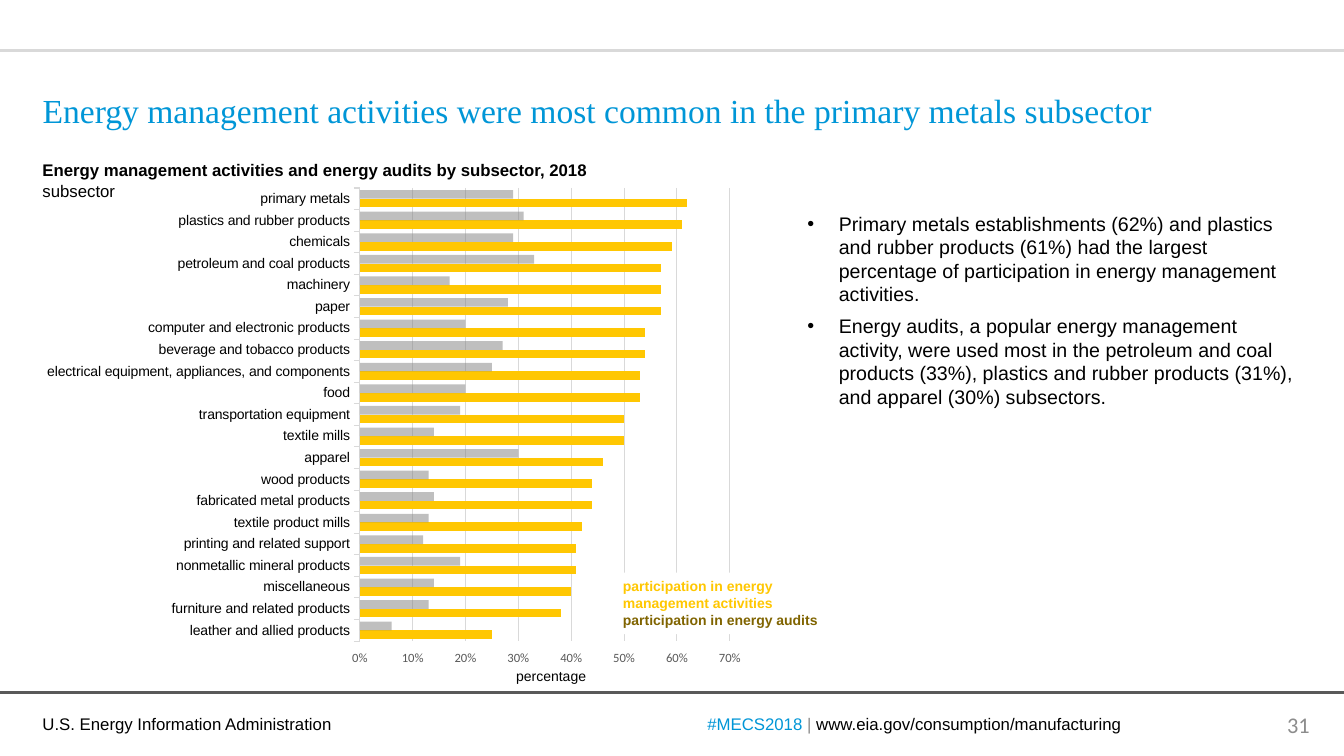
import copy

import pptx
import pptx.chart.data
import pptx.dml.color
import pptx.enum.chart
import pptx.enum.shapes
import pptx.enum.text
import pptx.oxml
import pptx.oxml.ns
import pptx.util
from lxml import etree
from pptx.oxml.ns import qn
from pptx.util import Cm

COLORS = {
    "black": "000000", "white": "FFFFFF", "blue": "0096D7", "gray": "8C8C8C",
    "rule": "D9D9D9", "dark_rule": "595959", "yellow": "FFC702",
    "audit": "808080", "audit_text": "806400",
}
ANCHOR = pptx.enum.text.MSO_ANCHOR
ALIGN = pptx.enum.text.PP_ALIGN

# subsector, share with energy management activities, share with energy audits
SUBSECTORS = [
    ("leather and allied products", 0.25, 0.06),
    ("furniture and related products", 0.38, 0.13),
    ("miscellaneous", 0.40, 0.14),
    ("nonmetallic mineral products", 0.41, 0.19),
    ("printing and related support", 0.41, 0.12),
    ("textile product mills", 0.42, 0.13),
    ("fabricated metal products", 0.44, 0.14),
    ("wood products", 0.44, 0.13),
    ("apparel", 0.46, 0.30),
    ("textile mills", 0.50, 0.14),
    ("transportation equipment", 0.50, 0.19),
    ("food", 0.53, 0.20),
    ("electrical equipment, appliances, and components", 0.53, 0.25),
    (" beverage and tobacco products", 0.54, 0.27),
    ("computer and electronic products", 0.54, 0.20),
    ("paper", 0.57, 0.28),
    ("machinery", 0.57, 0.17),
    ("petroleum and coal products", 0.57, 0.33),
    ("chemicals", 0.59, 0.29),
    ("plastics and rubber products", 0.61, 0.31),
    ("primary metals", 0.62, 0.29),
]


def rgb(name):
    return pptx.dml.color.RGBColor.from_string(COLORS[name])


def style_font(font, size, color="black", name="Arial", bold=False):
    font.size = pptx.util.Pt(size)
    font.name = name
    font.bold = bold
    font.color.rgb = rgb(color)


def add_rule(s, y, color):
    line = s.shapes.add_connector(
        pptx.enum.shapes.MSO_CONNECTOR.STRAIGHT, 0, Cm(y), Cm(33.87), Cm(y))
    line.line.color.rgb = rgb(color)
    line.line.width = pptx.util.Pt(2.25)
    etree.SubElement(line._element.spPr, qn("a:effectLst"))


def add_text(s, box, paragraphs, size, font="Arial", align=ALIGN.LEFT,
             anchor=ANCHOR.TOP, wrap=True):
    """Add a text box; each paragraph is a list of (text, color, bold) runs."""
    sp = s.shapes.add_textbox(*map(Cm, box))
    tf = sp.text_frame
    tf.word_wrap = wrap
    tf.vertical_anchor = anchor
    for i, runs in enumerate(paragraphs):
        p = tf.add_paragraph() if i else tf.paragraphs[0]
        p.alignment = align
        for text, color, bold in runs:
            r = p.add_run()
            r.text = text
            style_font(r.font, size, color, font, bold)
    return sp


def add_bullets(s, box, items):
    sp = add_text(s, box, [[(item, "black", False)] for item in items], 14)
    for p in sp.text_frame.paragraphs:
        p.space_after = pptx.util.Pt(6)
        pPr = p._p.get_or_add_pPr()
        pPr.set("marL", str(Cm(0.79)))
        pPr.set("indent", str(-Cm(0.79)))
        etree.SubElement(pPr, qn("a:buFont"), typeface="Arial")
        etree.SubElement(pPr, qn("a:buChar"), char="•")


def set_plot_area(chart, x, y, w, h):
    """Fix the inner plot area, in fractions of the chart."""
    plot_area = chart._chartSpace.chart.plotArea
    for old in plot_area.findall(qn("c:layout")):
        plot_area.remove(old)
    plot_area.insert(0, pptx.oxml.parse_xml(
        f'<c:layout {pptx.oxml.ns.nsdecls("c")}><c:manualLayout>'
        '<c:layoutTarget val="inner"/><c:xMode val="edge"/><c:yMode val="edge"/>'
        f'<c:x val="{x}"/><c:y val="{y}"/><c:w val="{w}"/><c:h val="{h}"/>'
        '</c:manualLayout></c:layout>'))


def move_audits_to_second_axis(chart):
    """Split the second series into its own bar plot on hidden axes."""
    plot_area = chart._chartSpace.chart.plotArea
    bars = plot_area.find(qn("c:barChart"))
    axes = [plot_area.find(qn(tag)) for tag in ("c:catAx", "c:valAx")]
    new_ids = {axis.find(qn("c:axId")).get("val"): str(5001 + i)
               for i, axis in enumerate(axes)}
    audit_bars = copy.deepcopy(bars)
    bars.remove(bars.findall(qn("c:ser"))[1])
    audit_bars.remove(audit_bars.find(qn("c:ser")))
    bars.addnext(audit_bars)
    hidden_axes = [copy.deepcopy(axis) for axis in axes]
    for axis in hidden_axes:
        axis.find(qn("c:delete")).set("val", "1")
        for grid in axis.findall(qn("c:majorGridlines")):
            axis.remove(grid)
    hidden_axes[1].find(qn("c:crosses")).set("val", "max")
    axes[1].addnext(hidden_axes[0])
    hidden_axes[0].addnext(hidden_axes[1])
    for part in (audit_bars, *hidden_axes):
        for ref in part.iter(qn("c:axId"), qn("c:crossAx")):
            ref.set("val", new_ids[ref.get("val")])


def add_subsector_chart(s, box):
    names, activities, audits = zip(*SUBSECTORS)
    data = pptx.chart.data.CategoryChartData(number_format="0%")
    data.categories = names
    data.add_series("Series 1", activities)
    data.add_series("Series 2", audits)
    chart = s.shapes.add_chart(
        pptx.enum.chart.XL_CHART_TYPE.BAR_CLUSTERED, *map(Cm, box), data).chart
    chart.has_legend = False
    chart.has_title = False
    style_font(chart.font, 10, name="Calibri")
    set_plot_area(chart, 0.453, 0.019, 0.512, 0.91)

    plot = chart.plots[0]
    plot.vary_by_categories = False
    plot.gap_width = 50
    for series, color in zip(plot.series, ("yellow", "audit")):
        series.format.fill.solid()
        series.format.fill.fore_color.rgb = rgb(color)
    audit_color = plot.series[1]._element.find(".//" + qn("a:srgbClr"))
    etree.SubElement(audit_color, qn("a:alpha"), val="50000")

    cat, val = chart.category_axis, chart.value_axis
    for axis in (cat, val):
        axis.major_tick_mark = pptx.enum.chart.XL_TICK_MARK.OUTSIDE
        axis.minor_tick_mark = pptx.enum.chart.XL_TICK_MARK.NONE
    style_font(cat.tick_labels.font, 10)
    style_font(val.tick_labels.font, 9, "dark_rule", "Calibri")
    val.minimum_scale, val.maximum_scale, val.major_unit = 0, 0.7, 0.1
    val.tick_labels.number_format = "0%"
    val.tick_labels.number_format_is_linked = False
    val.format.line.fill.background()
    for line in (cat.format.line, val.major_gridlines.format.line):
        line.color.rgb = rgb("rule")
        line.width = pptx.util.Pt(0.75)
    move_audits_to_second_axis(chart)


def set_title(s, box, text):
    sp = s.shapes.title
    sp.left, sp.top, sp.width, sp.height = map(Cm, box)
    tf = sp.text_frame
    tf.text = text
    tf.word_wrap = True
    tf.vertical_anchor = ANCHOR.BOTTOM
    p = tf.paragraphs[0]
    p.alignment = ALIGN.LEFT
    style_font(p.runs[0].font, 24, "blue", "Times New Roman")


def add_footer(s):
    add_rule(s, 17.45, "dark_rule")
    add_text(s, (0.82, 17.86, 9.4, 0.76),
             [[("U.S. Energy Information Administration", "black", False)]], 12)
    add_text(s, (17.33, 17.73, 11.43, 1.02),
             [[("#MECS2018 ", "blue", False), ("| ", "gray", False),
               ("www.eia.gov/consumption/manufacturing", "black", False)]],
             12, align=ALIGN.CENTER, anchor=ANCHOR.MIDDLE)
    add_text(s, (31.96, 17.75, 1.52, 1.02), [[("31", "gray", False)]], 16,
             "Calibri", ALIGN.CENTER, ANCHOR.MIDDLE)


def main():
    prs = pptx.Presentation()
    prs.slide_width, prs.slide_height = Cm(33.87), Cm(19.05)
    s = prs.slides.add_slide(prs.slide_layouts[5])
    add_rule(s, 1.28, "rule")
    set_title(s, (0.82, 1.3, 32.23, 2.11),
              "Energy management activities were most common in the primary metals subsector")
    add_footer(s)
    add_subsector_chart(s, (0.82, 4.5, 18.21, 12.55))
    add_text(s, (0.82, 3.91, 16, 1.27), [
        [("Energy management activities and energy audits by subsector, 2018", "black", True)],
        [("subsector", "black", False)]], 12)
    add_bullets(s, (20.1, 5.21, 12.95, 5.26), [
        "Primary metals establishments (62%) and plastics and rubber products (61%) had the "
        "largest percentage of participation in energy management activities.",
        "Energy audits, a popular energy management activity, were used most in the petroleum "
        "and coal products (33%), plastics and rubber products (31%), and apparel (30%) "
        "subsectors."])
    legend = add_text(s, (15.45, 14.43, 5.59, 1.55), [
        [("participation in energy management activities", "yellow", True)],
        [("participation in energy audits", "audit_text", True)]], 10)
    legend.fill.solid()
    legend.fill.fore_color.rgb = rgb("white")
    add_text(s, (12.76, 16.69, 2.29, 0.69), [[("percentage", "black", False)]], 10,
             wrap=False)
    prs.save("out.pptx")


if __name__ == "__main__":
    main()
